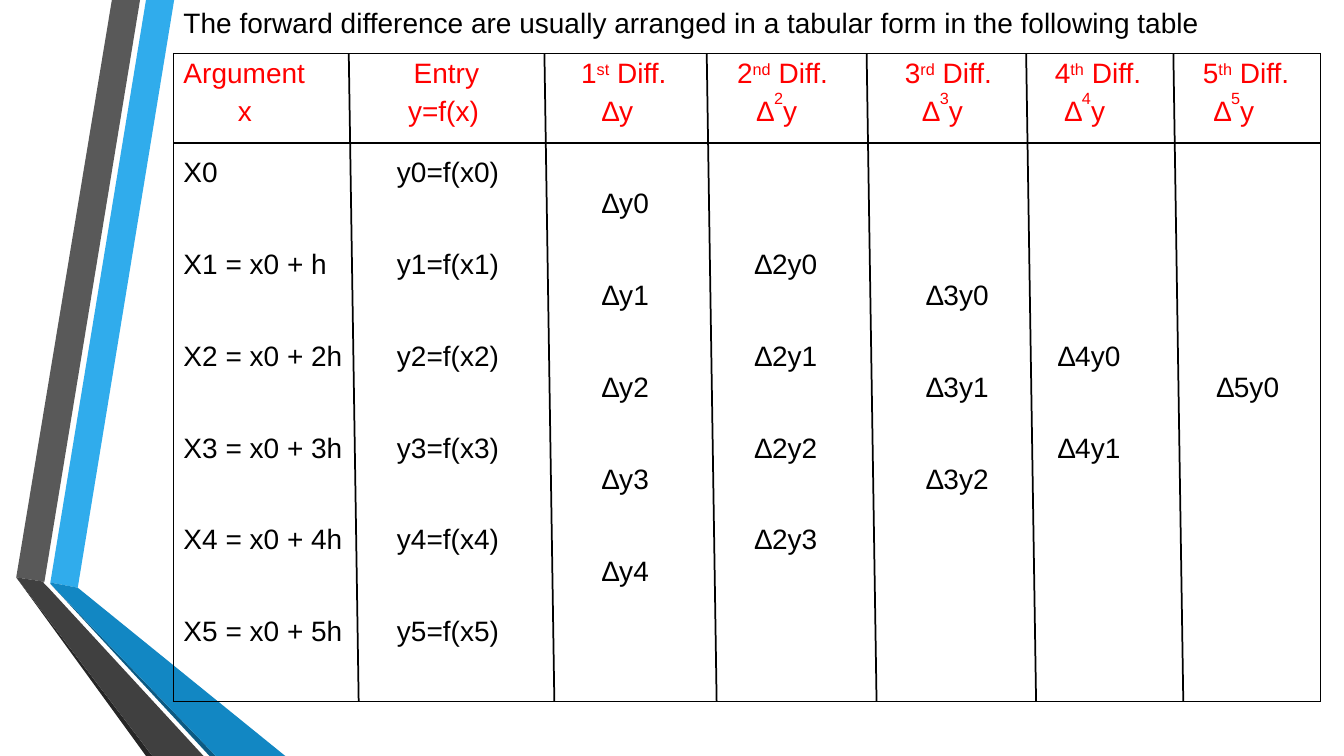
from lxml import etree
from pptx import Presentation, util as u
from pptx.dml.color import RGBColor
from pptx.enum import shapes as sh, text as tx
from pptx.oxml.ns import qn

Cm = u.Cm

# Content: ^ marks the start and end of a superscript
TITLE = "The forward difference are usually arranged in a tabular form in the following table"
HEADS = [
    ("Argument", "Entry", "1^st^ Diff.", "2^nd^ Diff.", "3^rd^ Diff.",
     "4^th^ Diff.", "5^th^ Diff."),
    ("x", "y=f(x)", "∆y", "∆^2^y", "∆^3^y", "∆^4^y", "∆^5^y"),
]
ROWS = [
    ("X0", "y0=f(x0)"),
    ("", "", "∆y0"),
    ("X1 = x0 + h", "y1=f(x1)", "", "∆2y0"),
    ("", "", "∆y1", "", "∆3y0"),
    ("X2 = x0 + 2h", "y2=f(x2)", "", "∆2y1", "", "∆4y0"),
    ("", "", "∆y2", "", "∆3y1", "", "∆5y0"),
    ("X3 = x0 + 3h", "y3=f(x3)", "", "∆2y2", "", "∆4y1"),
    ("", "", "∆y3", "", "∆3y2"),
    ("X4 = x0 + 4h", "y4=f(x4)", "", "∆2y3"),
    ("", "", "∆y4"),
    ("X5 = x0 + 5h", "y5=f(x5)"),
]

# Tab stops of each kind of line, in cm from the cell's text edge
TOP = (0, 5.8, 10.02, 13.95, 18.18, 21.96, 25.69)
SUB = (1.37, 5.66, 10.55, 14.45, 18.63, 22.21, 25.97)
BODY = (0, 5.38, 10.55, 14.4, 18.72, 22.04, 26.04)

# Ribbons at the left edge: colour and corners in cm
RIBBONS = [
    ("30ACEC", [(1.27, 14.68), (1.96, 14.81), (4.39, 0), (3.68, 0)]),
    ("595959", [(3.53, 0), (2.82, 0), (0.41, 14.55), (1.12, 14.66)]),
    ("262626", [(0.41, 14.55), (3.68, 19.05), (3.84, 19.05)]),
    ("0C5A82", [(1.27, 14.71), (5.28, 19.05), (5.44, 19.05)]),
    ("1287C3", [(1.27, 14.71), (5.44, 19.05), (7.19, 19.05), (1.96, 14.81),
                (1.27, 14.68)]),
    ("404040", [(5.13, 19.05), (1.22, 14.81), (1.09, 14.68), (1.12, 14.66),
                (0.41, 14.55), (3.84, 19.05)]),
]

# Frame and rules in cm
LEFT, HIGH, WIDE, TALL = 4.37, 1.35, 28.9, 16.33
RULES = (8.79, 13.72, 17.81, 21.84, 25.86, 29.57)
SLANT, HEADY = 0.25, 3.61


def color(code):
    return RGBColor.from_string(code)


def write(par, words, ink="000000", size=20, rise=30, gap=0, tabs=()):
    """Fill a paragraph; every second part between ^ marks is raised."""
    par.alignment = tx.PP_ALIGN.LEFT
    par.space_before = u.Pt(gap)
    if tabs:
        stops = etree.SubElement(par._p.get_or_add_pPr(), qn("a:tabLst"))
        for stop in tabs:
            etree.SubElement(stops, qn("a:tab"), pos=str(Cm(stop)), algn="l")
    for n, part in enumerate(words.split("^")):
        run = par.add_run()
        run.text = part
        run.font.name, run.font.size = "Arial", u.Pt(size)
        run.font.bold = False
        run.font.color.rgb = color(ink)
        if n % 2:
            run.font._element.set("baseline", str(rise * 1000))


def row(par, cells, stops, **form):
    """Put the filled cells of a line at their tab stops."""
    used = [(stop, word) for stop, word in zip(stops, cells) if word]
    line = "".join(("\t" if stop else "") + word for stop, word in used)
    write(par, line, tabs=[stop for stop, _ in used if stop], **form)


def rule(slide, *ends):
    line = slide.shapes.add_connector(
        sh.MSO_CONNECTOR.STRAIGHT, *[Cm(end) for end in ends])
    line.line.color.rgb = color("000000")
    line.line.width = u.Pt(1.25)
    etree.SubElement(line._element.spPr, qn("a:effectLst"))


def border(cell):
    props = cell._tc.get_or_add_tcPr()
    for side in ("lnL", "lnR", "lnT", "lnB"):
        edge = etree.SubElement(props, qn("a:" + side), w=str(u.Pt(1)))
        fill = etree.SubElement(edge, qn("a:solidFill"))
        etree.SubElement(fill, qn("a:srgbClr"), val="000000")


def main():
    deck = Presentation()
    deck.slide_width, deck.slide_height = Cm(33.87), Cm(19.05)
    slide = deck.slides.add_slide(deck.slide_layouts[5])

    # Ribbons
    for ink, dots in RIBBONS:
        dots = [(Cm(x), Cm(y)) for x, y in dots]
        form = slide.shapes.build_freeform(*dots[0], scale=1.0)
        form.add_line_segments(dots[1:], close=True)
        band = form.convert_to_shape()
        band.fill.solid()
        band.fill.fore_color.rgb = color(ink)
        band.line.fill.background()
        band.shadow.inherit = False

    # Title
    head = slide.shapes.title
    head.left, head.top, head.width, head.height = Cm(LEFT), 0, Cm(29.49), Cm(1.96)
    head.text_frame.vertical_anchor = tx.MSO_ANCHOR.TOP
    head.text_frame.auto_size = tx.MSO_AUTO_SIZE.NONE
    write(head.text_frame.paragraphs[0], TITLE)

    # Table: one framed cell whose columns are tab stops
    table = slide.shapes.add_table(
        1, 1, Cm(LEFT), Cm(HIGH), Cm(WIDE), Cm(TALL)).table
    table.first_row = table.horz_banding = False
    cell = table.cell(0, 0)
    border(cell)
    cell.fill.background()
    frame = cell.text_frame
    row(frame.paragraphs[0], HEADS[0], TOP, ink="FF0000")
    row(frame.add_paragraph(), HEADS[1], SUB, ink="FF0000", rise=62)
    for n, cells in enumerate(ROWS):
        row(frame.add_paragraph(), cells, BODY, gap=0 if n % 2 else 21)

    # Rules
    for x in RULES:
        rule(slide, x, HIGH, x + SLANT, HIGH + TALL)
    rule(slide, LEFT, HEADY, LEFT + WIDE, HEADY)

    deck.save("out.pptx")


if __name__ == "__main__":
    main()
